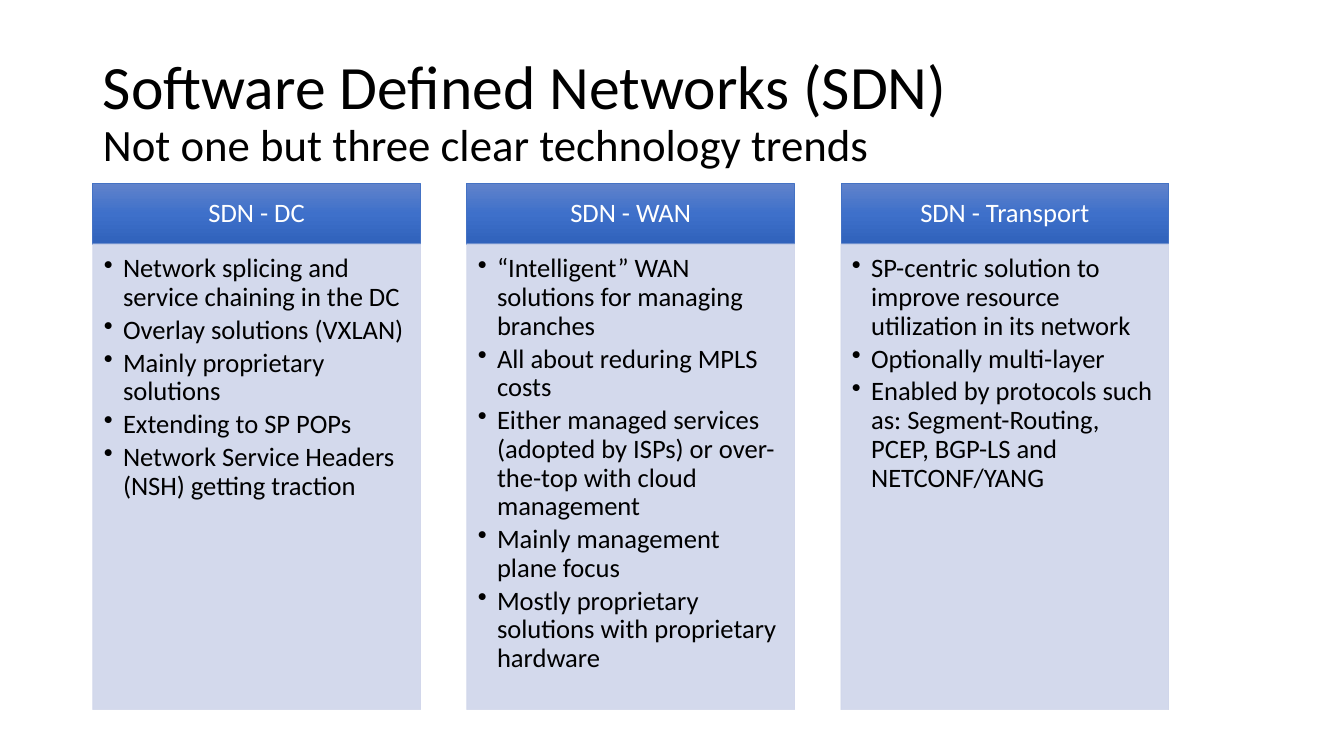
from copy import deepcopy
from dataclasses import dataclass

from lxml import etree
from pptx import Presentation
from pptx.dml.color import RGBColor
from pptx.enum.shapes import MSO_SHAPE
from pptx.enum.text import MSO_ANCHOR, MSO_AUTO_SIZE, PP_ALIGN
from pptx.oxml.ns import qn
from pptx.util import Inches, Pt

RECT = MSO_SHAPE.RECTANGLE
LEFT, CENTER = PP_ALIGN.LEFT, PP_ALIGN.CENTER
TOP, MIDDLE = MSO_ANCHOR.TOP, MSO_ANCHOR.MIDDLE
NO_FIT = MSO_AUTO_SIZE.NONE


@dataclass(frozen=True)
class Theme:
    font: str = "Calibri"
    ink: str = "000000"
    white: str = "FFFFFF"
    edge: str = "4472C4"
    panel: str = "CFD5EA"
    blend: tuple = ("6183CB", "3E70CA", "3062BB")
    title: int = 44
    sub: int = 32
    text: int = 19


THEME = Theme()

TRENDS = [
    ("SDN - DC", [
        "Network splicing and service chaining in the DC",
        "Overlay solutions (VXLAN)",
        "Mainly proprietary solutions",
        "Extending to SP POPs",
        "Network Service Headers (NSH) getting traction",
    ]),
    ("SDN - WAN", [
        "“Intelligent” WAN solutions for managing branches",
        "All about reduring MPLS costs",
        "Either managed services (adopted by ISPs) or over-the-top with cloud management",
        "Mainly management plane focus",
        "Mostly proprietary solutions with proprietary hardware",
    ]),
    ("SDN - Transport", [
        "SP-centric solution to improve resource utilization in its network",
        "Optionally multi-layer",
        "Enabled by protocols such as: Segment-Routing, PCEP, BGP-LS and NETCONF/YANG",
    ]),
]


def add_text(para, text, size=THEME.text, color=THEME.ink, align=LEFT, after=0):
    para.alignment = align
    para.line_spacing = 0.9
    para.space_after = Pt(after)
    run = para.add_run()
    run.text = text
    run.font.name = THEME.font
    run.font.size = Pt(size)
    run.font.color.rgb = RGBColor.from_string(color)


def set_frame(frame, anchor, insets):
    frame.word_wrap = True
    frame.auto_size = NO_FIT
    frame.vertical_anchor = anchor
    (frame.margin_left, frame.margin_top,
     frame.margin_right, frame.margin_bottom) = map(Inches, insets)


def add_bullet(para):
    props = para._p.get_or_add_pPr()
    props.set("marL", str(Inches(0.19)))
    props.set("indent", str(-Inches(0.19)))
    etree.SubElement(props, qn("a:buChar"), char="•")


def add_rect(slide, box, edge):
    rect = slide.shapes.add_shape(RECT, *map(Inches, box))
    rect.shadow.inherit = False
    rect.line.color.rgb = RGBColor.from_string(edge)
    rect.line.width = Pt(0.5)
    return rect


def fill_blend(shape, colors):
    """Spread the colours evenly from top to bottom."""
    shape.fill.gradient()
    shape.fill.gradient_angle = 270
    first = shape._element.spPr.find(".//" + qn("a:gs"))
    first.addnext(deepcopy(first))
    for i, (stop, color) in enumerate(zip(shape.fill.gradient_stops, colors)):
        stop.color.rgb = RGBColor.from_string(color)
        stop.position = i / (len(colors) - 1)


def fill_clear(shape, color, alpha):
    """Fill with a see-through colour, and make the outline match."""
    shape.fill.solid()
    shape.fill.fore_color.rgb = RGBColor.from_string(color)
    for tone in shape._element.spPr.iter(qn("a:srgbClr")):
        etree.SubElement(tone, qn("a:alpha"), val=str(alpha * 1000))


def add_title(slide, box):
    title = slide.shapes.title
    title.left, title.top, title.width, title.height = map(Inches, box)
    set_frame(title.text_frame, MIDDLE, (0.1, 0.05, 0.1, 0.05))
    para = title.text_frame.paragraphs[0]
    add_text(para, "Software Defined Networks (SDN)", size=THEME.title)
    para.add_line_break()
    add_text(para, "Not one but three clear technology trends", size=THEME.sub)


def add_trend(slide, box, name, points):
    left, top, width, height = box
    head = 0.6

    # Heading bar
    bar = add_rect(slide, (left, top, width, head), THEME.edge)
    fill_blend(bar, THEME.blend)
    set_frame(bar.text_frame, MIDDLE, (0.15, 0.08, 0.15, 0.08))
    add_text(bar.text_frame.paragraphs[0], name, color=THEME.white, align=CENTER)

    # Bullet panel
    panel = add_rect(slide, (left, top + head, width, height - head), THEME.panel)
    fill_clear(panel, THEME.panel, alpha=90)
    frame = panel.text_frame
    set_frame(frame, TOP, (0.11, 0.11, 0.15, 0.17))
    for i, point in enumerate(points):
        para = frame.add_paragraph() if i else frame.paragraphs[0]
        add_text(para, point, after=2.85)
        add_bullet(para)


def main():
    deck = Presentation()
    deck.slide_width, deck.slide_height = Inches(13.33), Inches(7.5)
    slide = deck.slides.add_slide(deck.slide_layouts.get_by_name("Title Only"))
    left, width, gap = 0.92, 3.25, 0.46
    add_title(slide, (left, 0.4, 11.5, 1.45))
    for i, (name, points) in enumerate(TRENDS):
        box = (left + i * (width + gap), 1.82, width, 5.22)
        add_trend(slide, box, name, points)
    deck.save("out.pptx")


if __name__ == "__main__":
    main()
